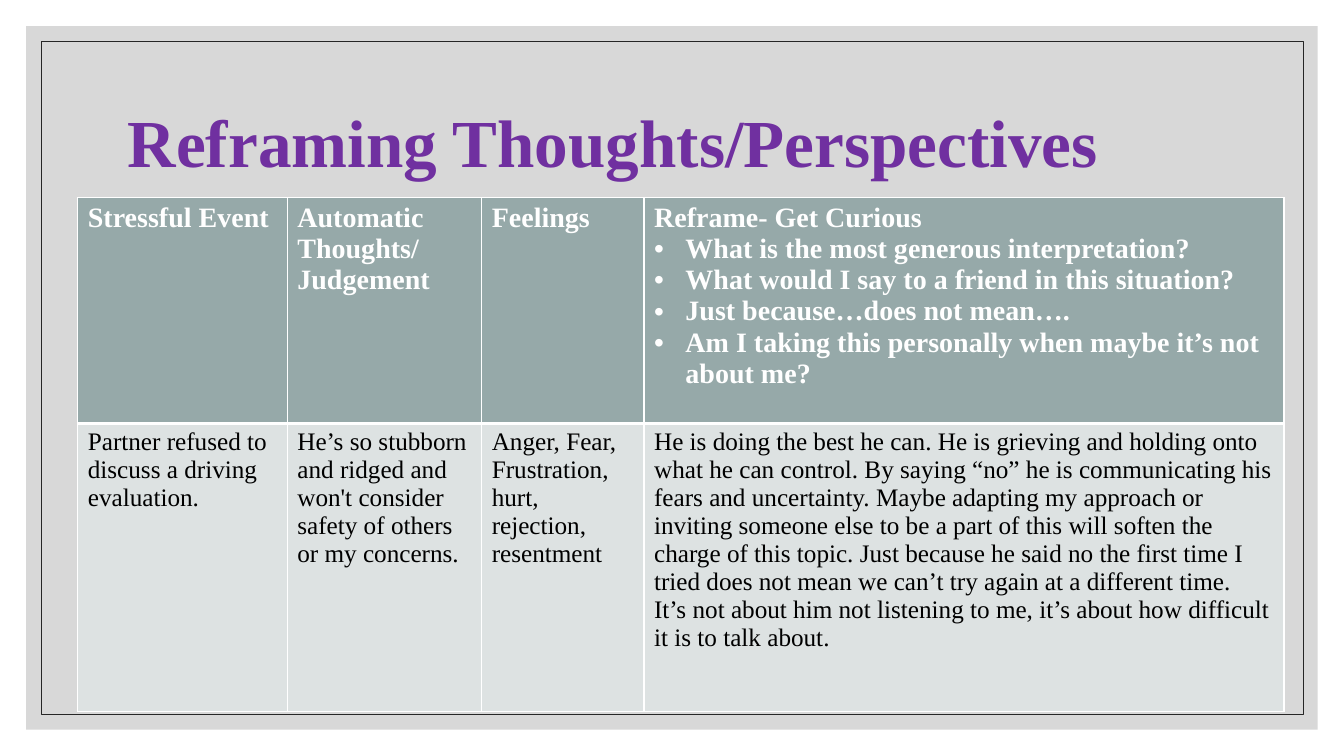
"""Build a slide with a table on reframing thoughts and perspectives."""
from typing import NamedTuple, Optional

from lxml.etree import SubElement
from pptx import Presentation
from pptx.dml.color import RGBColor
from pptx.enum.shapes import MSO_SHAPE as SHAPE
from pptx.enum.text import MSO_ANCHOR as ANCHOR
from pptx.oxml.ns import qn
from pptx.util import Cm, Pt

FONT = "Times New Roman"
WHITE = "FFFFFF"
BULLET = "•"
COLUMN_WIDTHS = (5.28, 4.9, 4.09, 16.13)


class Panel(NamedTuple):
    inset: float
    width: float
    height: float
    fill: Optional[str] = None
    alpha: int = 100
    line: Optional[str] = None


class Row(NamedTuple):
    height: float
    fill: str
    borders: dict
    font: dict
    cells: tuple


PANELS = (
    Panel(0.66, 32.55, 17.73, fill="BFBFBF", alpha=60),
    Panel(1.04, 31.8, 16.97, line="262626"),
)

ROWS = (
    Row(5.69, "96A9A9", {"L": 1, "R": 1, "T": 1, "B": 3},
        {"size": Pt(20), "bold": True, "color": WHITE}, (
            ("Stressful Event",),
            ("Automatic Thoughts/", "Judgement"),
            ("Feelings",),
            ("Reframe- Get Curious",
             "•What is the most generous interpretation?",
             "•What would I say to a friend in this situation?",
             "•Just because…does not mean….",
             "•Am I taking this personally when maybe it’s not about me?"),
        )),
    Row(7.26, "DDE2E2", {"L": 1, "R": 1, "T": 3, "B": 1},
        {"size": Pt(18), "bold": False, "color": "000000"}, (
            ("Partner refused to discuss a driving evaluation.",),
            ("He’s so stubborn and ridged and won't consider safety of others "
             "or my concerns.",),
            ("Anger, Fear,", "Frustration, hurt, rejection,", "resentment"),
            ("He is doing the best he can. He is grieving and holding onto what "
             "he can control. By saying “no” he is communicating his fears and "
             "uncertainty. Maybe adapting my approach or inviting someone else "
             "to be a part of this will soften the charge of this topic. Just "
             "because he said no the first time I tried does not mean we can’t "
             "try again at a different time.",
             "It’s not about him not listening to me, it’s about how difficult "
             "it is to talk about."),
        )),
)


def rgb(color: str) -> RGBColor:
    """Turn a hex string into a colour."""
    return RGBColor.from_string(color)


def set_fill(fill, color: str) -> None:
    """Give a fill one solid colour."""
    fill.solid()
    fill.fore_color.rgb = rgb(color)


def add_run(p, text: str, font: dict) -> None:
    """Add a run with the given font values."""
    r = p.add_run()
    r.text = text
    for name, value in {"name": FONT, **font}.items():
        if name == "color":
            r.font.color.rgb = rgb(value)
        else:
            setattr(r.font, name, value)


def add_panel(s, panel: Panel) -> None:
    """Draw a background rectangle."""
    sp = s.shapes.add_shape(SHAPE.RECTANGLE, Cm(panel.inset), Cm(panel.inset),
                            Cm(panel.width), Cm(panel.height))
    sp.shadow.inherit = False
    if panel.fill:
        set_fill(sp.fill, panel.fill)
        clr = sp.fill._xPr.find(qn("a:solidFill"))[0]
        SubElement(clr, qn("a:alpha"), val=str(panel.alpha * 1000))
    else:
        sp.fill.background()
    if panel.line:
        set_fill(sp.line.fill, panel.line)
        sp.line.width = Pt(0.5)
    else:
        sp.line.fill.background()


def add_title(s, text: str) -> None:
    """Add the slide heading."""
    tf = s.shapes.add_textbox(Cm(2.97), Cm(1.78), Cm(27.94), Cm(3.81)).text_frame
    for name, value in {"word_wrap": True, "vertical_anchor": ANCHOR.MIDDLE}.items():
        setattr(tf, name, value)
    p = tf.paragraphs[0]
    p.line_spacing = 0.9
    add_run(p, text, {"size": Pt(48), "bold": True, "color": "7030A0"})


def set_borders(cell, borders: dict) -> None:
    """Draw white cell borders with the given widths in points."""
    tc_pr = cell._tc.get_or_add_tcPr()
    for side, width in borders.items():
        ln = SubElement(tc_pr, qn(f"a:ln{side}"), w=str(Pt(width)))
        solid = SubElement(ln, qn("a:solidFill"))
        SubElement(solid, qn("a:srgbClr"), val=WHITE)


def set_bullet(p) -> None:
    """Give a paragraph a bullet with a hanging indent."""
    p_pr = p._p.get_or_add_pPr()
    for name, value in {"marL": Cm(0.79), "indent": -Cm(0.79)}.items():
        p_pr.set(name, str(value))
    SubElement(p_pr, qn("a:buFont"), typeface="Arial")
    SubElement(p_pr, qn("a:buChar"), char=BULLET)


def fill_cell(cell, row: Row, lines: tuple) -> None:
    """Format a cell and write its paragraphs."""
    set_borders(cell, row.borders)
    set_fill(cell.fill, row.fill)
    tf = cell.text_frame
    for i, line in enumerate(lines):
        p = tf.add_paragraph() if i else tf.paragraphs[0]
        if line.startswith(BULLET):
            set_bullet(p)
        add_run(p, line.removeprefix(BULLET), row.font)


def add_reframing_table(s) -> None:
    """Add the table of events, thoughts, feelings and reframes."""
    height = sum(row.height for row in ROWS)
    table = s.shapes.add_table(len(ROWS), len(COLUMN_WIDTHS), Cm(1.96), Cm(4.98),
                               Cm(sum(COLUMN_WIDTHS)), Cm(height)).table
    for column, width in zip(table.columns, COLUMN_WIDTHS):
        column.width = Cm(width)
    for i, row in enumerate(ROWS):
        table.rows[i].height = Cm(row.height)
        for j, lines in enumerate(row.cells):
            fill_cell(table.cell(i, j), row, lines)


def main() -> None:
    """Build and save the slide."""
    prs = Presentation()
    prs.slide_width, prs.slide_height = Cm(33.87), Cm(19.05)
    s = prs.slides.add_slide(prs.slide_layouts[6])
    for panel in PANELS:
        add_panel(s, panel)
    add_title(s, "Reframing Thoughts/Perspectives")
    add_reframing_table(s)
    prs.save("out.pptx")


if __name__ == "__main__":
    main()
